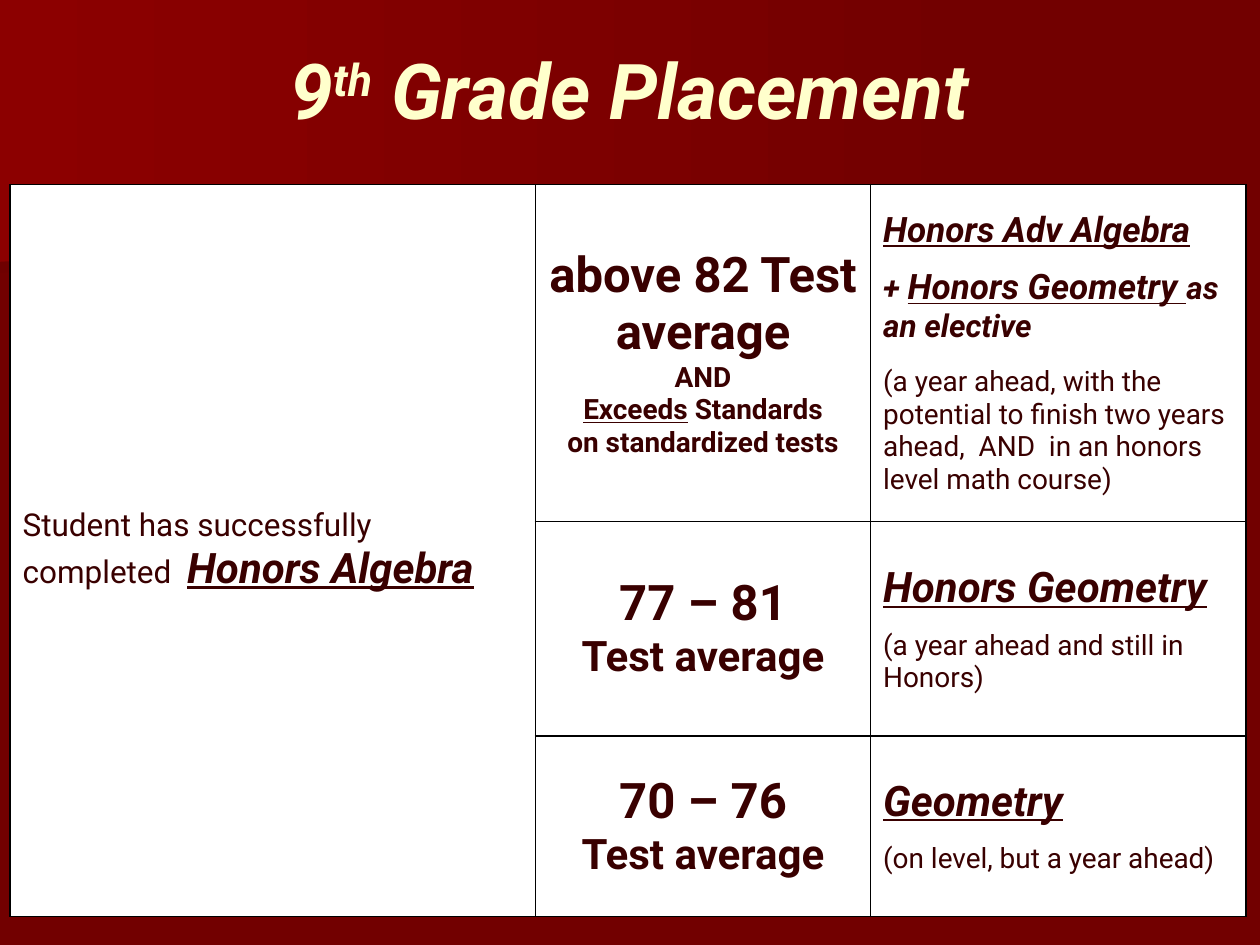
from lxml import etree
from pptx import Presentation
from pptx.dml.color import RGBColor
from pptx.enum.text import MSO_ANCHOR, MSO_AUTO_SIZE, PP_ALIGN
from pptx.oxml.ns import qn
from pptx.util import Inches, Pt

MIDDLE = MSO_ANCHOR.MIDDLE
FIXED = MSO_AUTO_SIZE.NONE
LEFT, CENTER = PP_ALIGN.LEFT, PP_ALIGN.CENTER
WIDE, HIGH = 10, 7.5
FONT = "Roboto"
DARK, CREAM, WHITE, BLACK = "390000", "FFFFCC", "FFFFFF", "000000"
BACK = "720000"
COLS = [0.417, 0.266, 0.298]
ROWS = [0.357, 0.227, 0.191]

TITLE = [(0, [("9", 44, "bi"), ("th", 44, "bi^"), (" Grade Placement", 44, "bi")])]
BANDS = [
    ("6F0000", [(0.778, 0.204), (0, 0.289), (0, 0.135), (0.779, 0.135), (0.778, 0.171)]),
    ("8C0000", [(0.792, 0.216), (0, 0.277), (0, 0), (0.792, 0)]),
]


def score(text):
    return [(0, [(text, 28, "b")]), (0, [("Test average", 24, "b")])]


def course(name, note):
    return [(0, [(name, 24, "biu")]), (9.4, [(note, 16, "")])]


START = [(0, [("Student has successfully completed  ", 18, ""),
              ("Honors Algebra", 24, "biu")])]
TOP = [
    (0, [("above 82 Test average", 28, "b")]),
    (0, [("AND", 16, "b")]),
    (0, [("Exceeds", 16, "bu"), (" Standards", 16, "b")]),
    (0, [("on standardized tests", 16, "b")]),
]
BEST = [
    (0, [("Honors Adv Algebra", 20, "biu")]),
    (9.4, [("+ ", 18, "bi"), ("Honors Geometry ", 20, "biu"), ("as an elective", 18, "bi")]),
    (11.7, [("(a year ahead, with the potential to finish two years ahead,"
             "  AND  in an honors level math course)", 16, "")]),
]
GRID = [
    [START, TOP, BEST],
    [None, score("77 – 81"), course("Honors Geometry", "(a year ahead and still in Honors)")],
    [None, score("70 – 76"), course("Geometry", "(on level, but a year ahead)")],
]


def color(code):
    return RGBColor.from_string(code)


def across(share):
    return Inches(WIDE * share)


def down(share):
    return Inches(HIGH * share)


def write(frame, paras, tint, align):
    for i, (gap, runs) in enumerate(paras):
        para = frame.paragraphs[0] if i == 0 else frame.add_paragraph()
        para.alignment = align
        para.space_before = Pt(gap)
        for text, size, style in runs:
            run = para.add_run()
            run.text = text
            font = run.font
            font.name, font.size = FONT, Pt(size)
            font.bold, font.italic = "b" in style, "i" in style
            font.underline = "u" in style
            font.color.rgb = color(tint)
            if "^" in style:
                run._r.get_or_add_rPr().set("baseline", "30000")


def band(slide, tint, points):
    spots = [(across(x), down(y)) for x, y in points]
    pen = slide.shapes.build_freeform(*spots[0])
    pen.add_line_segments(spots[1:], close=True)
    shape = pen.convert_to_shape()
    shape.shadow.inherit = False
    shape.line.fill.background()
    shape.fill.gradient()
    shape.fill.gradient_angle = 0
    for stop, code in zip(shape.fill.gradient_stops, (tint, BACK)):
        stop.color.rgb = color(code)


def head(slide):
    title = slide.shapes.title
    title.left, title.top = across(0.05), down(0.01)
    title.width, title.height = across(0.9), down(0.167)
    frame = title.text_frame
    frame.auto_size, frame.vertical_anchor = FIXED, MIDDLE
    write(frame, TITLE, CREAM, CENTER)
    slide.shapes._spTree.append(title._element)


def edge(cell):
    props = cell._tc.get_or_add_tcPr()
    for side in ("lnL", "lnR", "lnT", "lnB"):
        line = etree.SubElement(props, qn("a:" + side), w=str(Pt(1)))
        fill = etree.SubElement(line, qn("a:solidFill"))
        etree.SubElement(fill, qn("a:srgbClr"), val=BLACK)


def chart(slide):
    table = slide.shapes.add_table(
        len(ROWS), len(COLS), across(0.008), down(0.195),
        across(sum(COLS)), down(sum(ROWS))).table
    for col, share in zip(table.columns, COLS):
        col.width = across(share)
    for row, share in zip(table.rows, ROWS):
        row.height = down(share)
    table.cell(0, 0).merge(table.cell(2, 0))
    for r, line in enumerate(GRID):
        for c, paras in enumerate(line):
            cell = table.cell(r, c)
            edge(cell)
            cell.fill.solid()
            cell.fill.fore_color.rgb = color(WHITE)
            cell.vertical_anchor = MIDDLE
            if paras:
                write(cell.text_frame, paras, DARK, CENTER if c == 1 else LEFT)


def main():
    deck = Presentation()
    deck.slide_width, deck.slide_height = Inches(WIDE), Inches(HIGH)
    slide = deck.slides.add_slide(deck.slide_layouts[5])
    slide.background.fill.solid()
    slide.background.fill.fore_color.rgb = color(BACK)
    for tint, points in BANDS:
        band(slide, tint, points)
    head(slide)
    chart(slide)
    deck.save("out.pptx")


if __name__ == "__main__":
    main()
